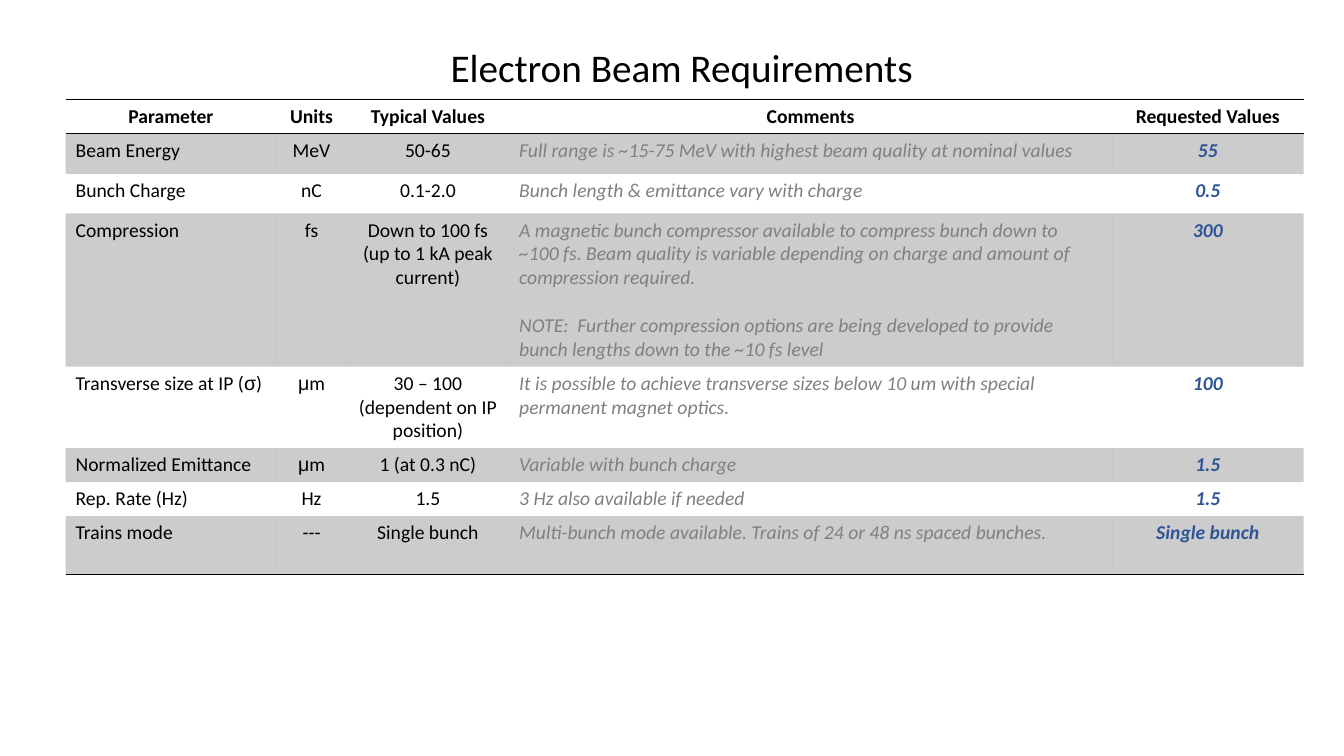
from dataclasses import dataclass
from itertools import groupby

from lxml import etree
from pptx import Presentation
from pptx.dml.color import RGBColor
from pptx.enum.text import MSO_AUTO_SIZE as AutoSize, PP_ALIGN as Align
from pptx.oxml import parse_xml
from pptx.oxml.ns import nsdecls, qn
from pptx.util import Inches, Pt

BLACK = RGBColor(0x00, 0x00, 0x00)
GREY = RGBColor(0x80, 0x80, 0x80)
BLUE = RGBColor(0x2F, 0x55, 0x97)
FONT = "Calibri"
GREEK_FONT = "Arial"
GREEK = "σμ"
TEXT_SIZE = 14
NO_STYLE = "{2D5ABB26-0587-4C30-8999-92F81FD0307C}"


@dataclass(frozen=True)
class Column:
    heading: str
    width: float
    align: Align = Align.CENTER
    color: RGBColor = BLACK
    bold: bool = False
    italic: bool = False


@dataclass(frozen=True)
class Requirement:
    height: float
    parameter: str
    units: str
    typical: str
    comments: tuple[str, ...]
    requested: str

    def cells(self) -> list[tuple[str, ...]]:
        """Return the paragraphs of each cell, from left to right."""
        return [(self.parameter,), (self.units,), (self.typical,), self.comments, (self.requested,)]


COLUMNS = [
    Column("Parameter", 2.09, Align.LEFT),
    Column("Units", 0.7),
    Column("Typical Values", 1.61),
    Column("Comments", 5.98, Align.LEFT, GREY, italic=True),
    Column("Requested Values", 1.9, Align.CENTER, BLUE, bold=True, italic=True),
]
HEADER_HEIGHT = 0.32
REQUIREMENTS = [
    Requirement(0.4, "Beam Energy", "MeV", "50-65",
                ("Full range is ~15-75 MeV with highest beam quality at nominal values",), "55"),
    Requirement(0.39, "Bunch Charge", "nC", "0.1-2.0",
                ("Bunch length & emittance vary with charge",), "0.5"),
    Requirement(1.45, "Compression", "fs", "Down to 100 fs (up to 1 kA peak current)",
                ("A magnetic bunch compressor available to compress bunch down to \v"
                 "~100 fs. Beam quality is variable depending on charge and amount of "
                 "compression required.",
                 "NOTE:  Further compression options are being developed to provide "
                 "bunch lengths down to the ~10 fs level"), "300"),
    Requirement(0.77, "Transverse size at IP (σ)", "μm", "30 – 100 (dependent on IP position)",
                ("It is possible to achieve transverse sizes below 10 um with special "
                 "permanent magnet optics.",), "100"),
    Requirement(0.32, "Normalized Emittance", "μm", "1 (at 0.3 nC)",
                ("Variable with bunch charge",), "1.5"),
    Requirement(0.32, "Rep. Rate (Hz)", "Hz", "1.5", ("3 Hz also available if needed",), "1.5"),
    Requirement(0.58, "Trains mode", "---", "Single bunch",
                ("Multi-bunch mode available. Trains of 24 or 48 ns spaced bunches.",),
                "Single bunch"),
]


def set_font(font, size: float, color: RGBColor, bold: bool = False, italic: bool = False) -> None:
    """Apply the slide font with the given look."""
    font.name, font.size, font.bold, font.italic = FONT, Pt(size), bold, italic
    font.color.rgb = color


def write_text(para, text: str) -> None:
    """Write text, giving Greek letters their own font."""
    if not any(letter in GREEK for letter in text):
        para.text = text
        return
    for is_greek, letters in groupby(text, lambda letter: letter in GREEK):
        span = para.add_run()
        span.text = "".join(letters)
        span.font.name = GREEK_FONT if is_greek else FONT


def fill_cell(cell, texts: tuple[str, ...], align: Align, color: RGBColor,
              bold: bool, italic: bool) -> None:
    """Write the paragraphs of one table cell."""
    frame = cell.text_frame
    for index, text in enumerate(texts):
        para = frame.add_paragraph() if index else frame.paragraphs[0]
        write_text(para, text)
        para.alignment = align
        if index:
            para.space_before = Pt(17)
        set_font(para.font, TEXT_SIZE, color, bold, italic)


def paint_cell(cell, shaded: bool, edges: tuple[str, ...]) -> None:
    """Shade the cell and rule the named edges."""
    if shaded:
        cell.fill.solid()
        cell.fill.fore_color.rgb = BLACK
        tint = cell._tc.tcPr.find(qn("a:solidFill"))[0]
        etree.SubElement(tint, qn("a:alpha")).set("val", "20000")
    else:
        cell.fill.background()
    for position, edge in enumerate(edges):
        line = parse_xml(
            f'<a:{edge} {nsdecls("a")} w="{Pt(1)}"><a:solidFill>'
            f'<a:srgbClr val="{BLACK}"/></a:solidFill></a:{edge}>')
        cell._tc.tcPr.insert(position, line)


def add_requirements(page) -> None:
    """Add the table of beam requirements."""
    heights = [HEADER_HEIGHT] + [item.height for item in REQUIREMENTS]
    width = sum(column.width for column in COLUMNS)
    table = page.shapes.add_table(len(heights), len(COLUMNS), Inches(0.65), Inches(0.99),
                                  Inches(width), Inches(sum(heights))).table
    table.first_row = table.horz_banding = False
    table._tbl.tblPr.find(qn("a:tableStyleId")).text = NO_STYLE
    for row, height in zip(table.rows, heights):
        row.height = Inches(height)
    for index, column in enumerate(COLUMNS):
        table.columns[index].width = Inches(column.width)
        header = table.cell(0, index)
        fill_cell(header, (column.heading,), Align.CENTER, BLACK, True, False)
        paint_cell(header, False, ("lnT", "lnB"))
        for number, item in enumerate(REQUIREMENTS, start=1):
            cell = table.cell(number, index)
            fill_cell(cell, item.cells()[index], column.align, column.color,
                      column.bold, column.italic)
            last = number == len(REQUIREMENTS)
            paint_cell(cell, number % 2 == 1, ("lnB",) if last else ())


def add_title(page) -> None:
    """Add the slide title."""
    box = page.shapes.add_textbox(Inches(4.37), Inches(0.38), Inches(4.84), Inches(0.57))
    frame = box.text_frame
    frame.word_wrap = False
    frame.auto_size = AutoSize.SHAPE_TO_FIT_TEXT
    para = frame.paragraphs[0]
    para.text = "Electron Beam Requirements"
    set_font(para.font, 28, BLACK)


def main() -> None:
    """Build the slide and save it."""
    deck = Presentation()
    deck.slide_width, deck.slide_height = Inches(13.33), Inches(7.5)
    page = deck.slides.add_slide(deck.slide_layouts[6])
    add_requirements(page)
    add_title(page)
    deck.save("out.pptx")


if __name__ == "__main__":
    main()
